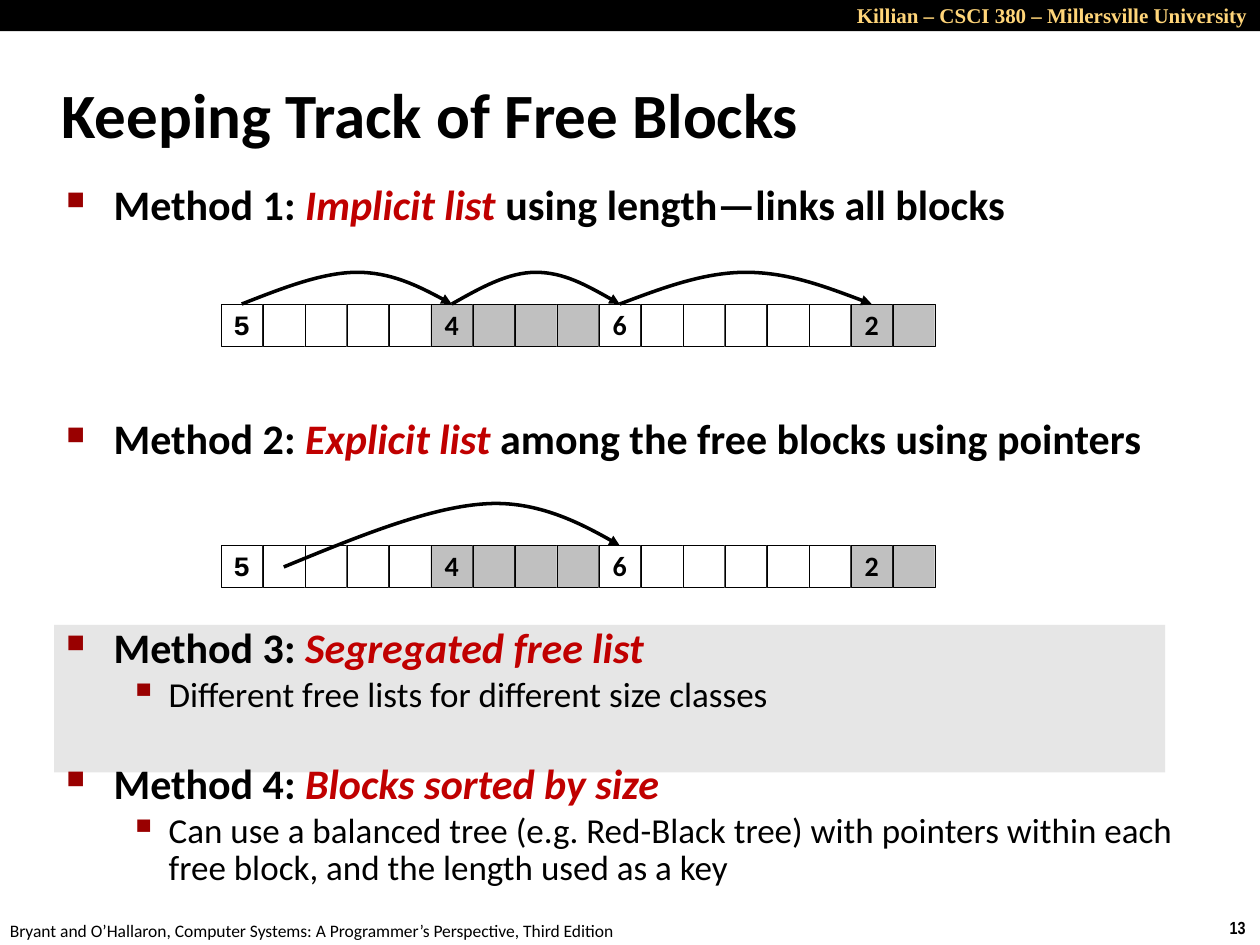
from dataclasses import dataclass

from lxml.etree import SubElement
from pptx import Presentation
from pptx.dml.color import RGBColor
from pptx.enum.shapes import MSO_SHAPE
from pptx.enum.text import MSO_ANCHOR, PP_ALIGN
from pptx.oxml.ns import qn
from pptx.util import Cm, Pt


@dataclass(frozen=True)
class Theme:
    """Colours, fonts and type sizes."""
    ink: str = "000000"
    paper: str = "FFFFFF"
    gold: str = "FFD579"
    red: str = "C00000"
    bullet: str = "990000"
    grey: str = "C0C0C0"
    band: str = "E6E6E6"
    main: str = "Calibri"
    mono: str = "Courier New"
    serif: str = "Times New Roman"
    narrow: str = "Arial Narrow"
    title: int = 36
    head: int = 24
    sub: int = 20
    cell: int = 16
    top: int = 12
    foot: int = 10


@dataclass(frozen=True)
class Point:
    """One list entry: a method with its key term, or a detail."""
    lead: str
    term: str = ""
    rest: str = ""
    gap: float = 4.3
    lines: float = 1.0
    level: int = 0


@dataclass(frozen=True)
class Arc:
    """A curved pointer; x values count cells, y values are cm."""
    start: tuple
    peak: tuple
    end: tuple
    tilt: float = 0.0
    pull: float = 1 / 3


@dataclass(frozen=True)
class Block:
    """A heap block of some cells, headed by its size."""
    size: int
    used: bool
    font: str


T = Theme()
LEFT, SIDE = 4.45, 2.54 / 3
ROWS = (6.14, 11.0)
BLOCKS = (Block(5, False, T.mono), Block(4, True, T.main),
          Block(6, False, T.main), Block(2, True, T.main))
POINTS = (
    Point("Method 1: ", "Implicit list ", "using length—links all blocks"),
    Point("Method 2: ", "Explicit list ",
          "among the free blocks using pointers", gap=105),
    Point("Method 3: ", "Segregated free list", gap=95.1, lines=0.83),
    Point("Different free lists for different size classes",
          gap=3.6, lines=0.88, level=1),
    Point("Method 4: ", "Blocks sorted by size", gap=29.4, lines=0.83),
    Point("Can use a balanced tree (e.g. Red-Black tree) with pointers within "
          "each free block, and the length used as a key",
          gap=3.6, lines=0.88, level=1),
)
ARCS = (
    Arc((0.5, 6.13), (3.25, 5.49), (5.5, 6.13), pull=0.35),
    Arc((5.5, 6.13), (7.5, 5.49), (9.5, 6.13)),
    Arc((9.5, 6.13), (12.5, 5.49), (15.5, 6.13)),
    Arc((1.5, 11.43), (6.25, 10.16), (9.5, 11.0), tilt=0.08, pull=0.36),
)


def write(par, text: str, *, size: int, font: str = T.main, tint: str = T.ink,
          bold: bool = False, slant: bool = False) -> None:
    """Add a run of text in the given format."""
    run = par.add_run()
    run.text = text
    face = run.font
    face.name, face.size = font, Pt(size)
    face.bold, face.italic = bold, slant
    face.color.rgb = RGBColor.from_string(tint)


def frame(slide, left: float, top: float, wide: float, high: float,
          wrap: bool = True):
    """Add a text box and return its text frame."""
    body = slide.shapes.add_textbox(Cm(left), Cm(top), Cm(wide), Cm(high)).text_frame
    body.word_wrap = wrap
    return body


def rect(slide, left: float, top: float, wide: float, high: float,
         fill: str, edge: bool = False):
    """Add a plain rectangle."""
    box = slide.shapes.add_shape(MSO_SHAPE.RECTANGLE, Cm(left), Cm(top),
                                 Cm(wide), Cm(high))
    box.shadow.inherit = False
    box.fill.solid()
    box.fill.fore_color.rgb = RGBColor.from_string(fill)
    if edge:
        box.line.color.rgb = RGBColor.from_string(T.ink)
        box.line.width = Pt(0.25)
    else:
        box.line.fill.background()
    return box


def mark(par, level: int) -> None:
    """Give a paragraph its bullet and hanging indent."""
    left, hang, sign, scale = ((0.95, 0.95, "■", 60), (2.06, 0.79, "▪", 110))[level]
    prop = par._p.get_or_add_pPr()
    prop.set("marL", str(Cm(left)))
    prop.set("indent", str(-Cm(hang)))
    tint = SubElement(prop, qn("a:buClr"))
    SubElement(tint, qn("a:srgbClr"), val=T.bullet)
    SubElement(prop, qn("a:buSzPct"), val=str(scale * 1000))
    SubElement(prop, qn("a:buChar"), char=sign)


def points(slide) -> None:
    """Write the list of methods."""
    body = frame(slide, 1.09, 3.48, 23.04, 14.94)
    for num, item in enumerate(POINTS):
        par = body.add_paragraph() if num else body.paragraphs[0]
        par.level = item.level
        par.space_before, par.line_spacing = Pt(item.gap), item.lines
        mark(par, item.level)
        if item.level:
            write(par, item.lead, size=T.sub)
            continue
        write(par, item.lead, size=T.head, bold=True)
        write(par, item.term, size=T.head, tint=T.red, bold=True, slant=True)
        if item.rest:
            write(par, item.rest, size=T.head, bold=True)


def heap(slide, top: float) -> None:
    """Draw one row of blocks, cell by cell."""
    col = 0
    for block in BLOCKS:
        for num in range(block.size):
            box = rect(slide, LEFT + col * SIDE, top, SIDE, SIDE,
                       T.grey if block.used else T.paper, edge=True)
            col += 1
            if num == 0:
                body = box.text_frame
                body.word_wrap = False
                body.vertical_anchor = MSO_ANCHOR.MIDDLE
                par = body.paragraphs[0]
                par.alignment, par.line_spacing = PP_ALIGN.CENTER, 0.98
                write(par, str(block.size), size=T.cell, font=block.font, bold=True)


def curve(slide, arc: Arc) -> None:
    """Draw an arc of two Bézier parts with an arrowhead."""
    (ax, ay), (px, py), (ex, ey) = arc.start, arc.peak, arc.end
    rise, fall = py + arc.tilt, py - arc.tilt
    near, far = arc.pull, 2 * arc.pull
    knots = ((ax, ay),
             (ax + near * (px - ax), (ay + rise) / 2), (ax + far * (px - ax), rise),
             (px, py),
             (px + near * (ex - px), fall), (px + far * (ex - px), (fall + ey) / 2),
             (ex, ey))
    spots = [(Cm(LEFT + x * SIDE), Cm(y)) for x, y in knots]
    pen = slide.shapes.build_freeform(*spots[0])
    pen.add_line_segments(spots[1:], close=False)
    line = pen.convert_to_shape()
    line.shadow.inherit = False
    line.fill.background()
    line.line.color.rgb = RGBColor.from_string(T.ink)
    line.line.width = Pt(2)
    SubElement(line.line._get_or_add_ln(), qn("a:tailEnd"), type="triangle")
    steps = list(line.element.iter(qn("a:lnTo")))
    trace = steps[0].getparent()
    for first in (0, 3):
        bend = SubElement(trace, qn("a:cubicBezTo"))
        for step in steps[first:first + 3]:
            bend.append(step[0])
            trace.remove(step)


def main() -> None:
    """Build the slide and save it."""
    deck = Presentation()
    deck.slide_width, deck.slide_height = Cm(25.4), Cm(19.05)
    slide = deck.slides.add_slide(deck.slide_layouts[5])

    rect(slide, 0, 0, 25.4, 0.63, T.ink)
    par = frame(slide, 13.97, -0.08, 11.43, 0.76).paragraphs[0]
    par.alignment = PP_ALIGN.RIGHT
    write(par, "Killian – CSCI 380 – Millersville University",
          size=T.top, font=T.serif, tint=T.gold, bold=True)
    par = frame(slide, 24.54, 18.36, 0.86, 0.69, wrap=False).paragraphs[0]
    write(par, "13", size=T.foot, font=T.narrow, bold=True)
    par = frame(slide, -0.05, 18.42, 12.9, 0.69, wrap=False).paragraphs[0]
    write(par, "Bryant and O’Hallaron, Computer Systems: "
          "A Programmer’s Perspective, Third Edition", size=T.foot)

    title = slide.shapes.title
    title.left, title.top, title.width, title.height = Cm(0.99), Cm(1.22), Cm(21.08), Cm(2.11)
    title.text_frame.vertical_anchor = MSO_ANCHOR.MIDDLE
    par = title.text_frame.paragraphs[0]
    par.alignment = PP_ALIGN.LEFT
    write(par, "Keeping Track of Free Blocks", size=T.title, bold=True)

    rect(slide, 1.09, 12.6, 22.4, 2.97, T.band)
    points(slide)
    for top in ROWS:
        heap(slide, top)
    for arc in ARCS:
        curve(slide, arc)
    deck.save("out.pptx")


if __name__ == "__main__":
    main()
